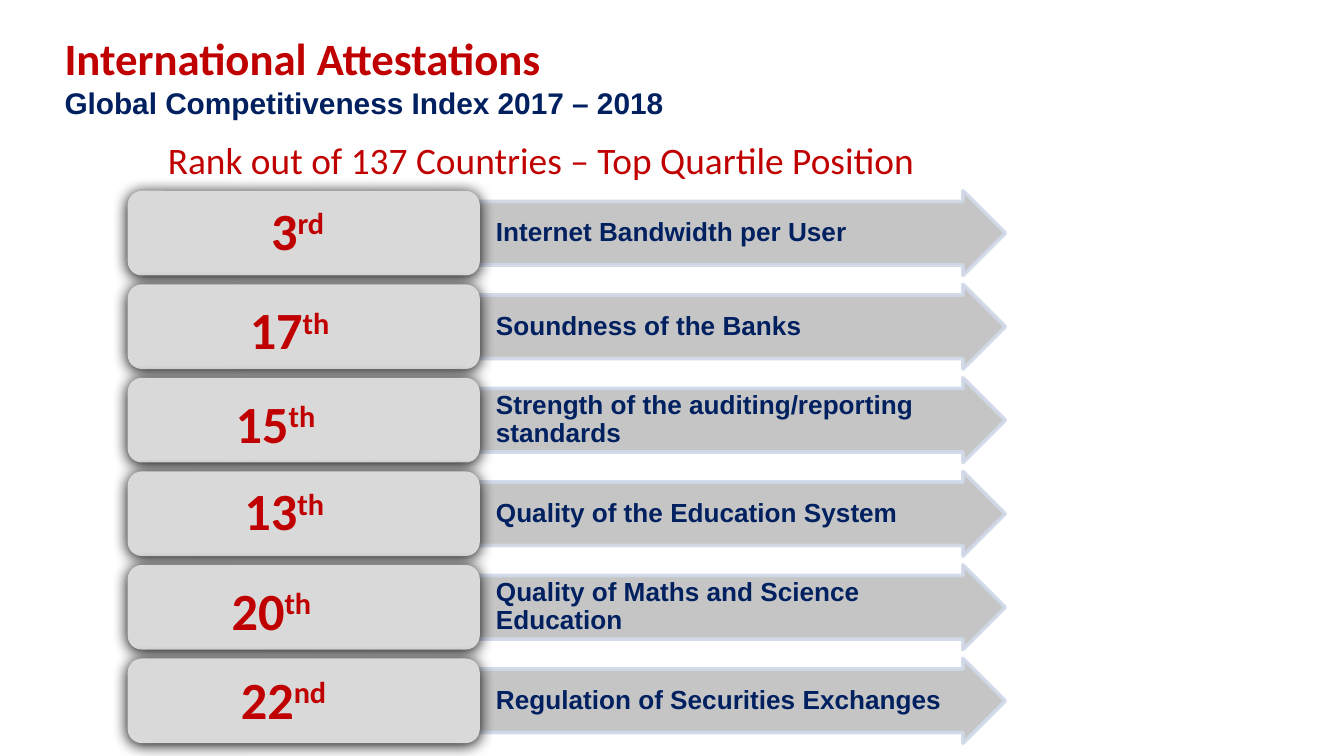
import pptx
import pptx.dml.color
import pptx.enum.shapes
import pptx.enum.text
import pptx.oxml
import pptx.oxml.ns
import pptx.util

Inches = pptx.util.Inches
Pt = pptx.util.Pt
RGBColor = pptx.dml.color.RGBColor
MSO_SHAPE = pptx.enum.shapes.MSO_SHAPE
PP_ALIGN = pptx.enum.text.PP_ALIGN
MSO_ANCHOR = pptx.enum.text.MSO_ANCHOR
qn = pptx.oxml.ns.qn

RED = RGBColor(0xC0, 0x00, 0x00)
NAVY = RGBColor(0x00, 0x20, 0x60)
ARROW_GREY = RGBColor(0xBF, 0xBF, 0xBF)
ARROW_EDGE = RGBColor(0xD0, 0xD8, 0xE8)
CARD_GREY = RGBColor(0xD9, 0xD9, 0xD9)

CARD_SHADOW = (
    f'<a:outerShdw {pptx.oxml.ns.nsdecls("a")} blurRad="{Pt(8.5)}" '
    f'dist="{Pt(1)}" dir="5400000" rotWithShape="0">'
    '<a:srgbClr val="000000"/></a:outerShdw>'
)

FIRST_TOP = 1.42
LAST_TOP = 4.9
ROW_HEIGHT = 0.63
CARD_LEFT = 0.95
CARD_WIDTH = 2.62
CARD_PADDING = 0.03
ARROW_LEFT = 3.56
ARROW_WIDTH = 3.92
LABEL_WIDTH = 3.69
LABEL_PADDING = 0.08

RANKINGS = [
    ("3", "rd", "Internet Bandwidth per User", 0.09, 0),
    ("17", "th", "Soundness of the Banks", 0.21, 0.09),
    ("15", "th", "Strength of the auditing/reporting standards", 0.42, 0.09),
    ("13", "th", "Quality of the Education System", 0.29, 0),
    ("20", "th", "Quality of Maths and Science Education", 0.48, 0.09),
    ("22", "nd", "Regulation of Securities Exchanges", 0.3, 0.02),
]


class RankingSlide:
    heading_font = "Calibri"
    body_font = "Arial"

    def __init__(self, presentation):
        self.slide = presentation.slides.add_slide(presentation.slide_layouts[5])

    def format_run(self, run, font, size, color, bold=True):
        run.font.name = font
        run.font.size = Pt(size)
        run.font.color.rgb = color
        run.font.bold = bold

    def set_frame(self, text_frame, left, top, right, bottom):
        text_frame.word_wrap = True
        text_frame.vertical_anchor = MSO_ANCHOR.MIDDLE
        text_frame.margin_left = Inches(left)
        text_frame.margin_top = Inches(top)
        text_frame.margin_right = Inches(right)
        text_frame.margin_bottom = Inches(bottom)

    def add_title(self, heading, subheading):
        title = self.slide.shapes.title
        title.left, title.top = Inches(0.38), Inches(0.09)
        title.width, title.height = Inches(7.98), Inches(0.94)
        self.set_frame(title.text_frame, 0.1, 0.05, 0.1, 0.05)
        title.text_frame.auto_size = pptx.enum.text.MSO_AUTO_SIZE.NONE
        paragraph = title.text_frame.paragraphs[0]
        paragraph.text = f"{heading}\v{subheading}"
        paragraph.alignment = PP_ALIGN.LEFT
        self.format_run(paragraph.runs[0], self.heading_font, 24, RED)
        self.format_run(paragraph.runs[1], self.body_font, 16, NAVY)

    def add_text(self, left, top, width, height, text, margins):
        box = self.slide.shapes.add_textbox(
            Inches(left), Inches(top), Inches(width), Inches(height))
        self.set_frame(box.text_frame, *margins)
        paragraph = box.text_frame.paragraphs[0]
        paragraph.text = text
        return paragraph

    def add_caption(self, text):
        paragraph = self.add_text(
            1.15, 0.97, 6.65, 0.44, text, (0.1, 0.05, 0.1, 0.05))
        self.format_run(paragraph.runs[0], self.heading_font, 20, RED, bold=False)

    def add_block(self, kind, left, top, width, fill):
        shape = self.slide.shapes.add_shape(
            kind, Inches(left), Inches(top), Inches(width), Inches(ROW_HEIGHT))
        shape.fill.solid()
        shape.fill.fore_color.rgb = fill
        shape.line.fill.background()
        shape.shadow.inherit = False
        return shape

    def add_arrow(self, top, label):
        arrow = self.add_block(
            MSO_SHAPE.RIGHT_ARROW, ARROW_LEFT, top, ARROW_WIDTH, ARROW_GREY)
        arrow.adjustments[0] = 0.75
        arrow.adjustments[1] = 0.5
        arrow.line.color.rgb = ARROW_EDGE
        arrow.line.width = Pt(2)
        for color in arrow._element.spPr.iter(qn("a:srgbClr")):
            color.append(pptx.oxml.parse_xml(
                f'<a:alpha {pptx.oxml.ns.nsdecls("a")} val="90000"/>'))
        paragraph = self.add_text(
            ARROW_LEFT, top + LABEL_PADDING, LABEL_WIDTH,
            ROW_HEIGHT - 2 * LABEL_PADDING, label, (0.13, 0.01, 0.01, 0.01))
        paragraph.line_spacing = 0.9
        self.format_run(paragraph.runs[0], self.body_font, 14, NAVY)

    def add_card(self, top, number, suffix, shift_left, shift_down):
        card = self.add_block(
            MSO_SHAPE.ROUNDED_RECTANGLE, CARD_LEFT, top, CARD_WIDTH, CARD_GREY)
        effects = card._element.spPr.find(qn("a:effectLst"))
        effects.append(pptx.oxml.parse_xml(CARD_SHADOW))
        paragraph = self.add_text(
            CARD_LEFT + CARD_PADDING, top + CARD_PADDING,
            CARD_WIDTH - 2 * CARD_PADDING, ROW_HEIGHT - 2 * CARD_PADDING, number,
            (0.12, 0.06 + shift_down, 0.12 + shift_left, 0.06))
        paragraph.alignment = PP_ALIGN.CENTER
        paragraph.line_spacing = 0.9
        superscript = paragraph.add_run()
        superscript.text = suffix
        for run in paragraph.runs:
            self.format_run(run, self.heading_font, 28, RED)
        superscript.font._element.set("baseline", "30000")


def main():
    presentation = pptx.Presentation()
    presentation.slide_width = Inches(10)
    presentation.slide_height = presentation.slide_width * 9 // 16

    ranking = RankingSlide(presentation)
    ranking.add_title(
        "International Attestations", "Global Competitiveness Index 2017 – 2018")
    row_pitch = (LAST_TOP - FIRST_TOP) / (len(RANKINGS) - 1)
    for row, (number, suffix, label, shift_left, shift_down) in enumerate(RANKINGS):
        top = FIRST_TOP + row * row_pitch
        ranking.add_arrow(top, label)
        ranking.add_card(top, number, suffix, shift_left, shift_down)
    ranking.add_caption("Rank out of 137 Countries – Top Quartile Position")

    presentation.save("out.pptx")


if __name__ == "__main__":
    main()
